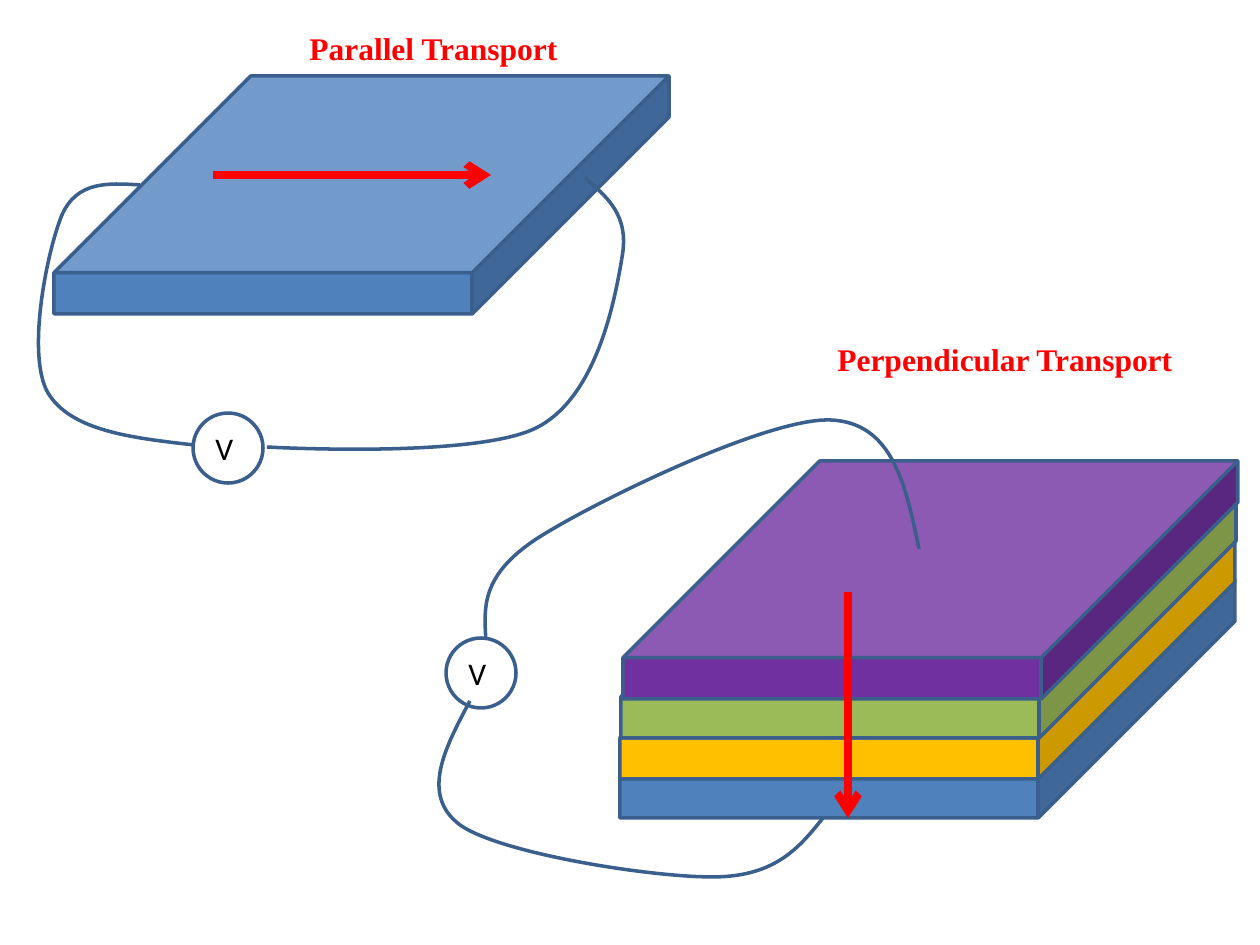
from lxml.etree import SubElement
from pptx import Presentation
from pptx.dml.color import RGBColor
from pptx.enum.shapes import MSO_CONNECTOR, MSO_SHAPE
from pptx.oxml.ns import qn
from pptx.util import Pt

SCALE = 914400 / 126  # EMU in one px
EDGE, RED, BLACK = "3A5F8C", "FF0000", "000000"
SLAB = (615, 238)
METER = 70

# Slabs: left, top, fill (back to front)
slabs = [
    (54, 76, "4F81BD"),
    (620, 580, "4F81BD"),
    (620, 541, "FFC000"),
    (621, 500, "9BBB59"),
    (623, 461, "7030A0"),
]

# Wires: start point, then three points for each curve
wires = [
    [(140, 185), (108, 183), (77, 181), (62, 215), (47, 251), (26, 355),
     (48, 393), (71, 431), (132, 438), (194, 445)],
    [(585, 178), (607, 197), (630, 215), (622, 258), (615, 300), (597, 396),
     (538, 427), (479, 459), (267, 447), (267, 447)],
    [(919, 549), (906, 486), (893, 422), (830, 420), (767, 418), (596, 501),
     (538, 538), (481, 575), (484, 607), (486, 640)],
    [(823, 818), (800, 847), (776, 876), (716, 877), (655, 878), (501, 854),
     (460, 825), (420, 795), (445, 748), (470, 701)],
]

meters = [(193, 413), (446, 638)]
arrows = [(213, 175, 491, 175), (848, 592, 848, 818)]

# Titles: text, left, top, width
titles = [
    ("Parallel Transport", 297, 23, 297),
    ("Perpendicular Transport", 825, 334, 387),
]


def px(*nums):
    return [round(n * SCALE) for n in nums]


def color(code):
    return RGBColor.from_string(code)


def outline(shape):
    shape.shadow.inherit = False
    shape.line.color.rgb = color(EDGE)
    shape.line.width = Pt(2)


def add_slab(shapes, left, top, fill):
    slab = shapes.add_shape(MSO_SHAPE.CUBE, *px(left, top, *SLAB))
    slab.adjustments[0] = 0.827
    slab.fill.solid()
    slab.fill.fore_color.rgb = color(fill)
    outline(slab)


def add_wire(shapes, points):
    pen = shapes.build_freeform(*points[0], scale=SCALE)
    pen.add_line_segments(points[1:], close=False)
    wire = pen.convert_to_shape()
    wire.fill.background()
    outline(wire)
    # Turn each three straight steps into one Bezier curve
    steps = list(wire._element.iter(qn("a:lnTo")))
    for i in range(0, len(steps), 3):
        curve = SubElement(steps[i].getparent(), qn("a:cubicBezTo"))
        for step in steps[i:i + 3]:
            curve.append(step[0])
            step.getparent().remove(step)


def add_label(shapes, text, left, top, width, font, code, bold=False):
    box = shapes.add_textbox(*px(left, top, width, 50))
    box.text_frame.word_wrap = True
    run = box.text_frame.paragraphs[0].add_run()
    run.text = text
    run.font.name = font
    run.font.size = Pt(18)
    run.font.bold = bold
    run.font.color.rgb = color(code)


def add_meter(shapes, left, top):
    ring = shapes.add_shape(MSO_SHAPE.OVAL, *px(left, top, METER, METER))
    ring.fill.background()
    outline(ring)
    add_label(shapes, "V", left + 10, top + 10, METER, "Calibri", BLACK)


def add_arrow(shapes, *ends):
    arrow = shapes.add_connector(MSO_CONNECTOR.STRAIGHT, *px(*ends))
    arrow.line.color.rgb = color(RED)
    arrow.line.width = Pt(4.5)
    SubElement(arrow.line._get_or_add_ln(), qn("a:tailEnd"), type="arrow")
    SubElement(arrow._element.spPr, qn("a:effectLst"))


def main():
    deck = Presentation()
    deck.slide_width, deck.slide_height = px(1260, 945)
    shapes = deck.slides.add_slide(deck.slide_layouts[6]).shapes
    for slab in slabs:
        add_slab(shapes, *slab)
    for points in wires:
        add_wire(shapes, points)
    for spot in meters:
        add_meter(shapes, *spot)
    for ends in arrows:
        add_arrow(shapes, *ends)
    for title in titles:
        add_label(shapes, *title, "Times New Roman", RED, bold=True)
    deck.save("out.pptx")


if __name__ == "__main__":
    main()
